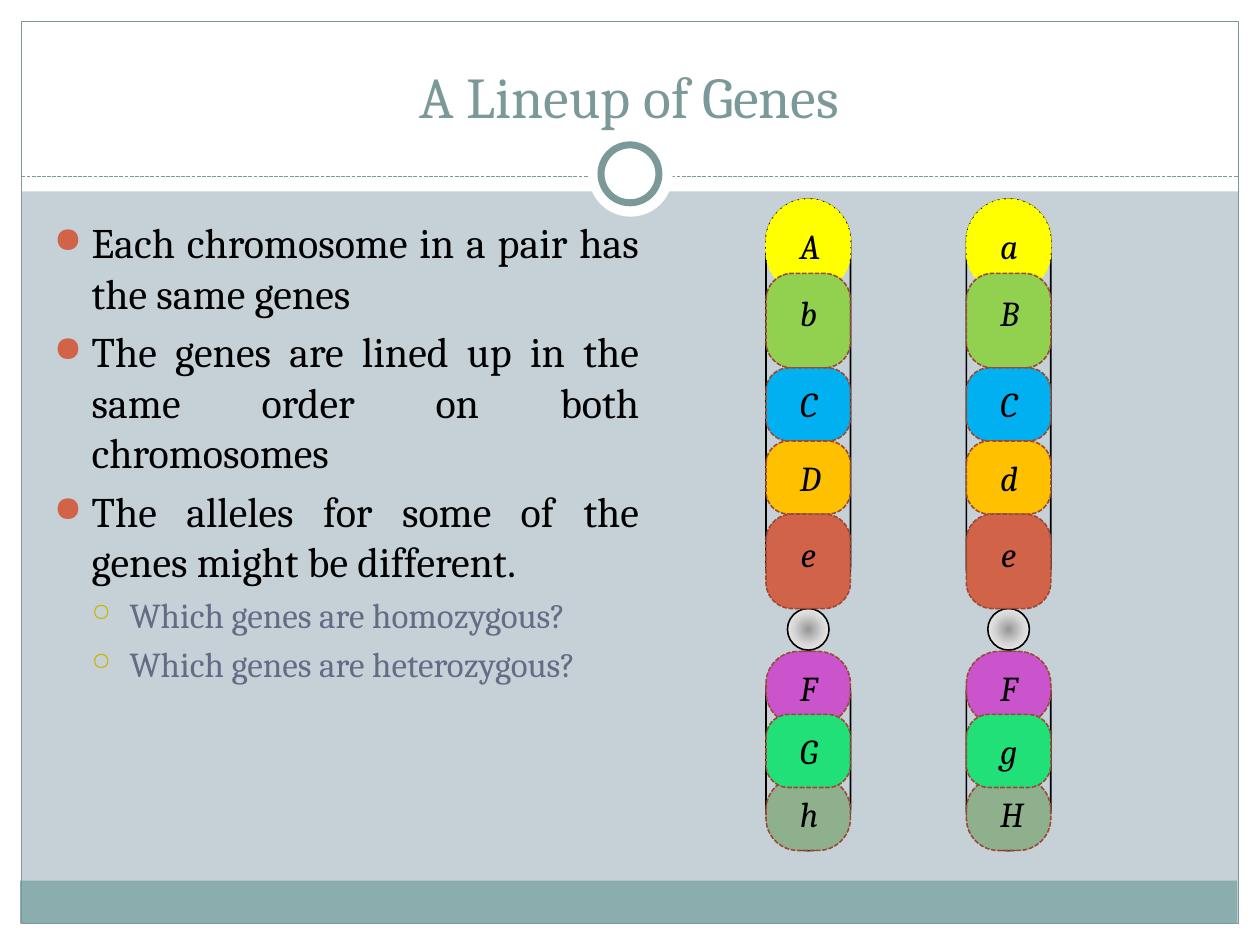
"""Build the slide "A Lineup of Genes" with a pair of chromosomes."""
from pptx import Presentation
from pptx import util as u
from pptx.dml.color import RGBColor
from pptx.enum import dml, shapes, text
from pptx.oxml import parse_xml
from pptx.oxml.ns import nsdecls, qn
from lxml import etree

rgb = RGBColor.from_string
MSO = shapes.MSO_SHAPE
ALIGN = text.PP_ALIGN
DASH = dml.MSO_LINE.SQUARE_DOT
TEAL = "7C999A"


def draw(parent, kind, box, fill=None, line=None, width=0.9, dash=None, adj=None):
    sp = parent.add_shape(kind, *[u.Inches(v) for v in box])
    sp.shadow.inherit = False
    if adj is not None:
        sp.adjustments[0] = adj
    if fill:
        sp.fill.solid()
        sp.fill.fore_color.rgb = rgb(fill)
    else:
        sp.fill.background()
    if line:
        sp.line.color.rgb = rgb(line)
        sp.line.width = u.Pt(width)
        sp.line.dash_style = dash
    else:
        sp.line.fill.background()
    return sp


def write(p, words, size=20, color="000000", italic=False, align=ALIGN.CENTER):
    p.alignment = align
    r = p.add_run()
    r.text = words
    r.font.name = "Cambria"
    r.font.size = u.Pt(size)
    r.font.italic = italic
    r.font.color.rgb = rgb(color)


prs = Presentation()
prs.slide_width, prs.slide_height = u.Inches(10), u.Inches(7.5)
s = prs.slides.add_slide(prs.slide_layouts[6])
s.background.fill.solid()
s.background.fill.fore_color.rgb = rgb("C5D1D7")

for box, fill in [
    ((0, 7.33, 10, 0.17), "FFFFFF"),
    ((0, 0, 10, 1.52), "FFFFFF"),
    ((0, 0, 0.17, 7.5), "FFFFFF"),
    ((9.83, 0, 0.17, 7.5), "FFFFFF"),
    ((0.16, 6.99, 9.66, 0.34), "8CADAE"),
]:
    draw(s.shapes, MSO.RECTANGLE, box, fill)
draw(s.shapes, MSO.RECTANGLE, (0.17, 0.17, 9.66, 7.16), line=TEAL, width=0.75)

rule = s.shapes.add_connector(shapes.MSO_CONNECTOR.STRAIGHT, u.Inches(0.17),
                              u.Inches(1.4), u.Inches(9.83), u.Inches(1.4))
rule.line.color.rgb = rgb(TEAL)
rule.line.width = u.Pt(0.75)
rule.line.dash_style = DASH
etree.SubElement(rule._element.spPr, qn("a:effectLst"))

draw(s.shapes, MSO.OVAL, (4.67, 1.05, 0.67, 0.67), "FFFFFF")
draw(s.shapes, MSO.OVAL, (4.77, 1.15, 0.46, 0.46), "FFFFFF", TEAL, 4)

tf = s.shapes.add_textbox(u.Inches(0.33), u.Inches(0.25), u.Inches(9.33), u.Inches(0.83)).text_frame
tf.word_wrap = True
tf.vertical_anchor = text.MSO_ANCHOR.BOTTOM
write(tf.paragraphs[0], "A Lineup of Genes", size=33, color=TEAL)

tf = s.shapes.add_textbox(u.Inches(0.33), u.Inches(1.67), u.Inches(4.84), u.Inches(5.25)).text_frame
tf.word_wrap = True
levels = [
    dict(size=24, color="000000", align=ALIGN.JUSTIFY),
    dict(size=20, color="646B86", align=ALIGN.LEFT),
]
bullets = [("●", "D16349", 85), ("○", "CCB400", 70)]
for i, (level, words) in enumerate([
    (0, "Each chromosome in a pair has the same genes"),
    (0, "The genes are lined up in the same order on both chromosomes"),
    (0, "The alleles for some of the genes might be different."),
    (1, "Which genes are homozygous?"),
    (1, "Which genes are heterozygous?"),
]):
    p = tf.add_paragraph() if i else tf.paragraphs[0]
    p.level = level
    write(p, words, **levels[level])
    p.space_before = u.Pt(levels[level]["size"] * 0.2)
    char, color, percent = bullets[level]
    pPr = p._p.get_or_add_pPr()
    pPr.set("marL", str(u.Inches(0.3 * (level + 1))))
    pPr.set("indent", str(u.Inches(-0.3)))
    buClr = etree.SubElement(pPr, qn("a:buClr"))
    etree.SubElement(buClr, qn("a:srgbClr"), val=color)
    etree.SubElement(pPr, qn("a:buSzPct"), val=str(percent * 1000))
    etree.SubElement(pPr, qn("a:buChar"), char=char)

# top, height, label height, corner, fill, outline
genes = [
    (1.58, 0.75, 0.44, 0.5, "FFFF00", "FFFF00"),
    (2.17, 0.75, 0.56, 0.31, "92D050", "9B4936"),
    (2.92, 0.58, 0.44, 0.31, "00B0F0", "9B4936"),
    (3.5, 0.58, 0.44, 0.31, "FFC000", "9B4936"),
    (4.08, 0.75, 0.56, 0.31, "D16349", "9B4936"),
    (5.17, 0.58, 0.44, 0.44, "C954CC", "9B4936"),
    (6.17, 0.58, 0.44, 0.44, "8FB08C", "9B4936"),
    (5.67, 0.58, 0.44, 0.31, "20E077", "9B4936"),
]
stops = "".join(f'<a:gs pos="{pos}"><a:srgbClr val="{color}"/></a:gs>'
                for pos, color in [(0, "979797"), (50000, "D7D7D7"), (100000, "FFFFFF")])
gradient = (f'<a:gradFill {nsdecls("a")}><a:gsLst>{stops}</a:gsLst><a:path path="circle">'
            '<a:fillToRect l="50000" t="50000" r="50000" b="50000"/></a:path></a:gradFill>')

for x, alleles in [(6.08, "AbCDeFhG"), (7.67, "aBCdeFHg")]:
    group = s.shapes.add_group_shape().shapes
    for top, height in [(1.58, 3.25), (5.17, 1.58)]:
        draw(group, MSO.ROUNDED_RECTANGLE, (x, top, 0.67, height), line="000000", width=1, adj=0.5)
    sp = draw(group, MSO.OVAL, (x + 0.17, 4.83, 0.33, 0.33), line="000000")
    spPr = sp._element.spPr
    spPr.replace(spPr.find(qn("a:noFill")), parse_xml(gradient))
    for allele, (top, height, label, corner, fill, outline) in zip(alleles, genes):
        draw(group, MSO.ROUNDED_RECTANGLE, (x, top, 0.67, height), fill, outline, dash=DASH, adj=corner)
        tf = group.add_textbox(u.Inches(x + 0.17), u.Inches(top + (height - label) / 2),
                               u.Inches(0.33), u.Inches(label)).text_frame
        tf.word_wrap = True
        write(tf.paragraphs[0], allele, italic=True)

prs.save("out.pptx")
